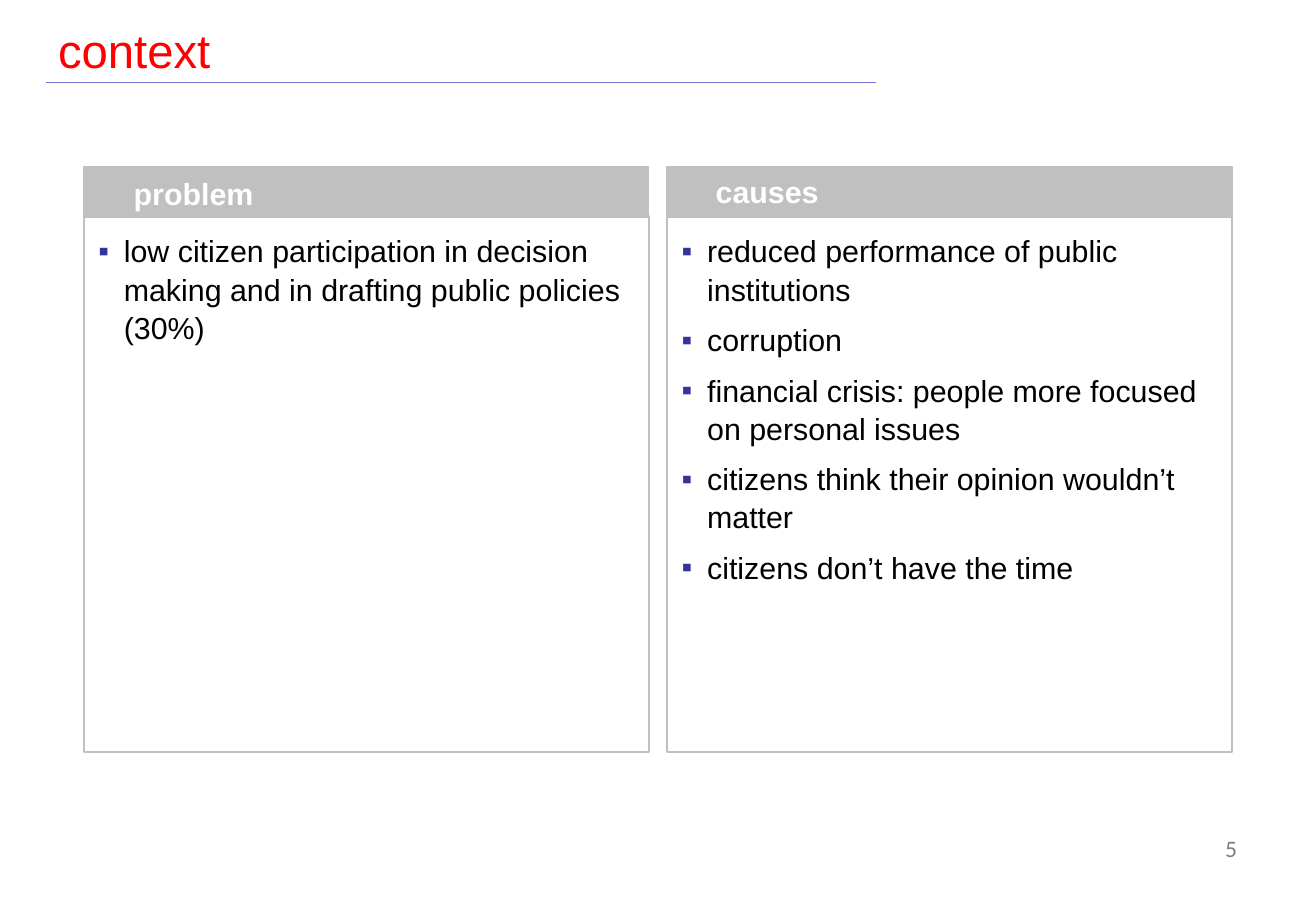
from lxml.etree import SubElement
from pptx import Presentation
from pptx.dml.color import RGBColor
from pptx.enum.shapes import MSO_CONNECTOR, MSO_SHAPE
from pptx.enum.text import MSO_ANCHOR, PP_ALIGN
from pptx.oxml.ns import qn
from pptx.util import Inches, Pt

RED = RGBColor(0xFF, 0x00, 0x00)
BLUE = RGBColor(0x75, 0x75, 0xD1)
NAVY = RGBColor(0x33, 0x33, 0x99)
SILVER = RGBColor(0xC0, 0xC0, 0xC0)
GRAY = RGBColor(0x80, 0x80, 0x80)
WHITE = RGBColor(0xFF, 0xFF, 0xFF)
BLACK = RGBColor(0x00, 0x00, 0x00)

LEFT, WIDTH, PITCH = 6.37, 42.94, 44.32
BAR_TOP, BAR_HIGH = 18.27, 5.6
BODY_TOP, BODY_HIGH = 23.73, 58.8

# heading, heading inset, heading top, bullet points
PANELS = [
    ("problem", 3.79, 18.53, [
        "low citizen participation in decision making and in drafting "
        "public policies (30%)",
    ]),
    ("causes", 3.69, 18.27, [
        "reduced performance of public institutions",
        "corruption",
        "financial crisis: people more focused on personal issues",
        "citizens think their opinion wouldn’t matter",
        "citizens don’t have the time",
    ]),
]


class Deck:
    """Draws on one slide; every place is a percentage of the slide's size."""

    def __init__(self, wide, high):
        self.show = Presentation()
        self.show.slide_width = Inches(wide)
        self.show.slide_height = Inches(high)
        self.slide = self.show.slides.add_slide(self.show.slide_layouts[6])
        self.shapes = self.slide.shapes

    def place(self, *shares):
        sizes = (self.show.slide_width, self.show.slide_height) * 2
        return [round(size * share / 100) for size, share in zip(sizes, shares)]

    def rule(self, ends, color, weight):
        line = self.shapes.add_connector(MSO_CONNECTOR.STRAIGHT, *self.place(*ends))
        line.line.color.rgb = color
        line.line.width = Pt(weight)
        SubElement(line._element.spPr, qn("a:effectLst"))

    def rect(self, area, weight, fill=None):
        box = self.shapes.add_shape(MSO_SHAPE.RECTANGLE, *self.place(*area))
        box.shadow.inherit = False
        if fill is None:
            box.fill.background()
        else:
            box.fill.solid()
            box.fill.fore_color.rgb = fill
        box.line.color.rgb = SILVER
        box.line.width = Pt(weight)
        return box

    def font(self, para, size, color, name="Arial", bold=False):
        para.font.name = name
        para.font.size = Pt(size)
        para.font.color.rgb = color
        para.font.bold = bold

    def inset(self, frame, start, end):
        frame.margin_left = frame.margin_top = Inches(start)
        frame.margin_right = frame.margin_bottom = Inches(end)

    def text(self, area, words, size, color, name="Arial", bold=False,
             align=PP_ALIGN.LEFT, anchor=MSO_ANCHOR.MIDDLE, flush=False):
        frame = self.shapes.add_textbox(*self.place(*area)).text_frame
        frame.word_wrap = True
        frame.vertical_anchor = anchor
        if flush:
            self.inset(frame, 0, 0)
        para = frame.paragraphs[0]
        para.text = words
        para.alignment = align
        self.font(para, size, color, name, bold)

    def list(self, area, points):
        """Outlined box with square bullets."""
        frame = self.rect(area, 1).text_frame
        frame.word_wrap = True
        frame.vertical_anchor = MSO_ANCHOR.TOP
        self.inset(frame, 0.12, 0.08)
        for i, point in enumerate(points):
            para = frame.add_paragraph() if i else frame.paragraphs[0]
            para.text = point
            para.alignment = PP_ALIGN.LEFT
            para.line_spacing = 1.05
            para.space_before = Pt(7.2 if i else 0)
            self.bullet(para)
            self.font(para, 18, BLACK)

    def bullet(self, para):
        props = para._p.get_or_add_pPr()
        props.set("marL", str(Inches(0.21)))
        props.set("indent", str(-Inches(0.21)))
        tint = SubElement(props, qn("a:buClr"))
        SubElement(tint, qn("a:srgbClr"), val=str(NAVY))
        SubElement(props, qn("a:buFont"), typeface="Arial")
        SubElement(props, qn("a:buChar"), char="▪")


def main():
    deck = Deck(10.83, 7.5)
    deck.rule((66.57, 9.07, 3.51, 9.07), BLUE, 0.75)
    deck.text((3.51, 1.73, 62.97, 7.33), "context", 28, RED)
    deck.text((87.81, 90.93, 7.11, 7.33), "5", 14, GRAY, "Calibri",
              align=PP_ALIGN.RIGHT, anchor=MSO_ANCHOR.TOP)
    for i, (head, inset, top, points) in enumerate(PANELS):
        left = LEFT + i * PITCH
        deck.rect((left, BAR_TOP, WIDTH, BAR_HIGH), 0.75, SILVER)
        deck.text((left + inset, top, 38.69, 5.47), head, 18, WHITE,
                  bold=True, flush=True)
        deck.list((left, BODY_TOP, WIDTH, BODY_HIGH), points)
    deck.show.save("out.pptx")


if __name__ == "__main__":
    main()
